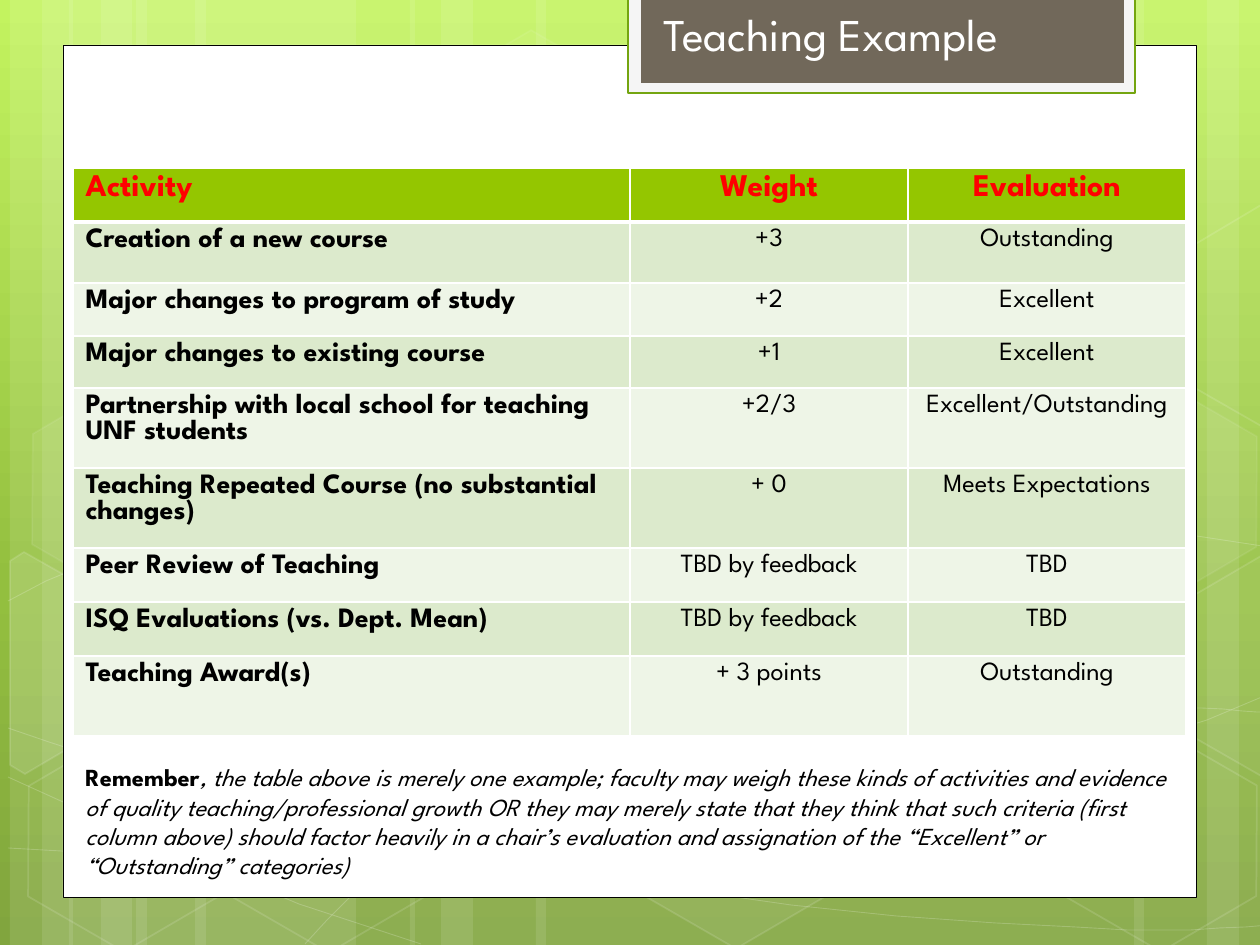
"""Build the Teaching Example slide with its weight and evaluation table."""
from copy import deepcopy
from lxml.etree import SubElement
from pptx import Presentation
from pptx.dml.color import RGBColor
from pptx.enum.shapes import MSO_SHAPE
from pptx.enum.text import PP_ALIGN
from pptx.oxml.ns import qn
from pptx.util import Pt

PX = 914400 / 126
FONT = "League Spartan"
COLORS = {
    "white": "FFFFFF", "black": "000000", "red": "FF0000",
    "top": "C3F35F", "mid": "93BF3F", "base": "81A53E",
    "frame": "F5F5F5", "rim": "74A510", "brown": "71685A",
    "head": "94C600", "odd": "DCEACC", "even": "EEF5E7",
}
RGB = {name: RGBColor.from_string(code) for name, code in COLORS.items()}


def px(*nums):
    return [round(num * PX) for num in nums]


def paint(shape, fill=None, line=None, width=1, alphas=()):
    shape.shadow.inherit = False
    if fill:
        shape.fill.solid()
        shape.fill.fore_color.rgb = RGB[fill]
    else:
        shape.fill.background()
    if line:
        shape.line.color.rgb = RGB[line]
        shape.line.width = Pt(width)
    else:
        shape.line.fill.background()
    tones = shape._element.spPr.iter(qn("a:srgbClr"))
    for tone, alpha in zip(list(tones), alphas):
        SubElement(tone, qn("a:alpha"), val=str(alpha * 1000))


deck = Presentation()
deck.slide_width, deck.slide_height = px(1260, 945)
slide = deck.slides.add_slide(deck.slide_layouts[6])
shapes = slide.shapes

back = slide.background.fill
back.gradient()
back.gradient_angle = 270
first = back.gradient_stops[0]._gs
first.addnext(deepcopy(first))
for stop, name, place in zip(back.gradient_stops, ("top", "mid", "base"), (0, 0.62, 1)):
    stop.color.rgb = RGB[name]
    stop.position = place

bars = [
    (136, 220), (10, 63), (42, 105), (195, 220), (69, 63), (101, 105),
    (924, 220), (1207, 63), (1134, 105), (536, 388), (410, 63), (441, 105),
]
for left, wide in bars:
    bar = shapes.add_shape(MSO_SHAPE.RECTANGLE, *px(left, 0, wide, 945))
    paint(bar, "white", alphas=[10])

curves = [
    [(8, 848), (77, 852), (145, 856), (239, 854), (334, 853), (451, 851), (577, 838),
     (703, 825), (882, 801), (998, 777), (1113, 753), (1231, 716), (1269, 694)],
    [(8, 601), (45, 581), (82, 562), (152, 543), (224, 524), (326, 496), (437, 488),
     (549, 479), (685, 478), (824, 488), (963, 498), (1193, 537), (1269, 547)],
    [(8, 777), (160, 847), (311, 916), (421, 944)],
    [(8, 728), (48, 742), (88, 756), (161, 776), (234, 795), (344, 827), (450, 848),
     (554, 869), (687, 892), (791, 905), (896, 919), (1008, 924), (1075, 927),
     (1140, 932), (1158, 930), (1191, 930), (1223, 929), (1246, 926), (1269, 925)],
    [(305, 944), (328, 919), (350, 893), (381, 871), (411, 848), (454, 823), (489, 805),
     (524, 788), (546, 780), (592, 767), (638, 754), (722, 737), (766, 728),
     (811, 719), (818, 719), (857, 717), (896, 713), (958, 709), (1000, 708),
     (1045, 707), (1116, 708), (1116, 708), (1116, 708), (1201, 708), (1201, 708),
     (1223, 709), (1245, 711), (1256, 712), (1268, 713), (1264, 712), (1268, 713)],
]
for knots in curves:
    dots = []
    for i in range(0, len(knots) - 1, 3):
        for t in (1 / 3, 2 / 3, 1):
            parts = ((1 - t) ** 3, 3 * t * (1 - t) ** 2, 3 * t * t * (1 - t), t ** 3)
            dots.append([sum(w * knot[axis] for w, knot in zip(parts, knots[i:i + 4]))
                         for axis in (0, 1)])
    pen = shapes.build_freeform(*knots[0], scale=PX)
    pen.add_line_segments(dots, close=False)
    paint(pen.convert_to_shape(), None, "white", 0.5, [20])

hexes = [
    (421, 45, 4, 8), (626, 742, 6, 12), (14, 745, 0, 12), (18, 393, 7, 8),
    (219, 746, 0, 12), (949, 571, 10, 12), (1051, 745, 0, 12), (1051, 396, 7, 8),
]
for left, top, glow, edge in hexes:
    cell = shapes.add_shape(MSO_SHAPE.HEXAGON, *px(left, top, 220, 192))
    cell.adjustments[0] = 0.285
    cell.rotation = 30
    paint(cell, "white" if glow else None, "white", 1, [glow, edge] if glow else [edge])

cuts = [
    ([(10, 561), (24, 552), (121, 607), (120, 718), (25, 774), (10, 765)], [10, 12]),
    ([(1167, 611), (1261, 556), (1271, 562), (1271, 772), (1263, 777), (1167, 722)], [4, 12]),
    ([(1167, 261), (1261, 205), (1273, 212), (1271, 422), (1263, 427), (1167, 372)], [12]),
]
for dots, alphas in cuts:
    pen = shapes.build_freeform(*dots[0], scale=PX)
    pen.add_line_segments(dots[1:])
    paint(pen.convert_to_shape(), "white" if len(alphas) == 2 else None, "white", 1, alphas)

panels = [
    ((63, 45, 1134, 853), "white", "black", 0.5),
    ((628, -2, 507, 95), "frame", "rim", 1.25),
    ((641, -2, 483, 85), "brown", None, 0),
]
for place, fill, line, width in panels:
    paint(shapes.add_shape(MSO_SHAPE.RECTANGLE, *px(*place)), fill, line, width)

title = shapes.add_textbox(*px(651, 0, 483, 68)).text_frame
title.word_wrap = True
para = title.paragraphs[0]
para.text = "Teaching Example"
para.font.name = FONT
para.font.size = Pt(26)
para.font.color.rgb = RGB["white"]

rows = [
    (54, "Activity", "Weight", "Evaluation"),
    (61, "Creation of a new course", "+3", "Outstanding"),
    (53, "Major changes to program of study", "+2", "Excellent"),
    (52, "Major changes to existing course", "+1", "Excellent"),
    (80, "Partnership with local school for teaching UNF students", "+2/3",
     "Excellent/Outstanding"),
    (80, "Teaching Repeated Course (no substantial changes)", "+ 0", "Meets Expectations"),
    (54, "Peer Review of Teaching", "TBD by feedback", "TBD"),
    (54, "ISQ Evaluations (vs. Dept. Mean)", "TBD by feedback", "TBD"),
    (80, "Teaching Award(s)", "+ 3 points", "Outstanding"),
]
table = shapes.add_table(len(rows), 3, *px(73, 168, 1113, 568)).table
for col, wide in zip(table.columns, px(557, 278, 278)):
    col.width = wide
for r, (high, *words) in enumerate(rows):
    table.rows[r].height = round(high * PX)
    for c, word in enumerate(words):
        cell = table.cell(r, c)
        props = cell._tc.get_or_add_tcPr()
        for side in ("lnL", "lnR", "lnT", "lnB"):
            thick = 3 if (r, side) in ((0, "lnB"), (1, "lnT")) else 1
            edge = SubElement(props, qn("a:" + side), w=str(Pt(thick)))
            ink = SubElement(edge, qn("a:solidFill"))
            SubElement(ink, qn("a:srgbClr"), val=COLORS["white"])
        cell.fill.solid()
        cell.fill.fore_color.rgb = RGB["head" if r == 0 else "odd" if r % 2 else "even"]
        para = cell.text_frame.paragraphs[0]
        para.text = word
        para.alignment = PP_ALIGN.CENTER if c else PP_ALIGN.LEFT
        para.font.name = FONT
        para.font.size = Pt(18 if r == 0 else 15 if c else 16)
        para.font.bold = r == 0 or c == 0
        para.font.color.rgb = RGB["black" if r else "red"]

note = shapes.add_textbox(*px(73, 756, 1113, 131)).text_frame
note.word_wrap = True
para = note.paragraphs[0]
para.font.name = FONT
para.font.size = Pt(14)
para.font.color.rgb = RGB["black"]
lead = para.add_run()
lead.text = "Remember"
lead.font.bold = True
rest = para.add_run()
rest.text = (
    ", the table above is merely one example; faculty may weigh these kinds of activities "
    "and evidence of quality teaching/professional growth OR they may merely state that they "
    "think that such criteria (first column above) should factor heavily in a chair’s "
    "evaluation and assignation of the “Excellent” or “Outstanding” categories)"
)
rest.font.italic = True

deck.save("out.pptx")
